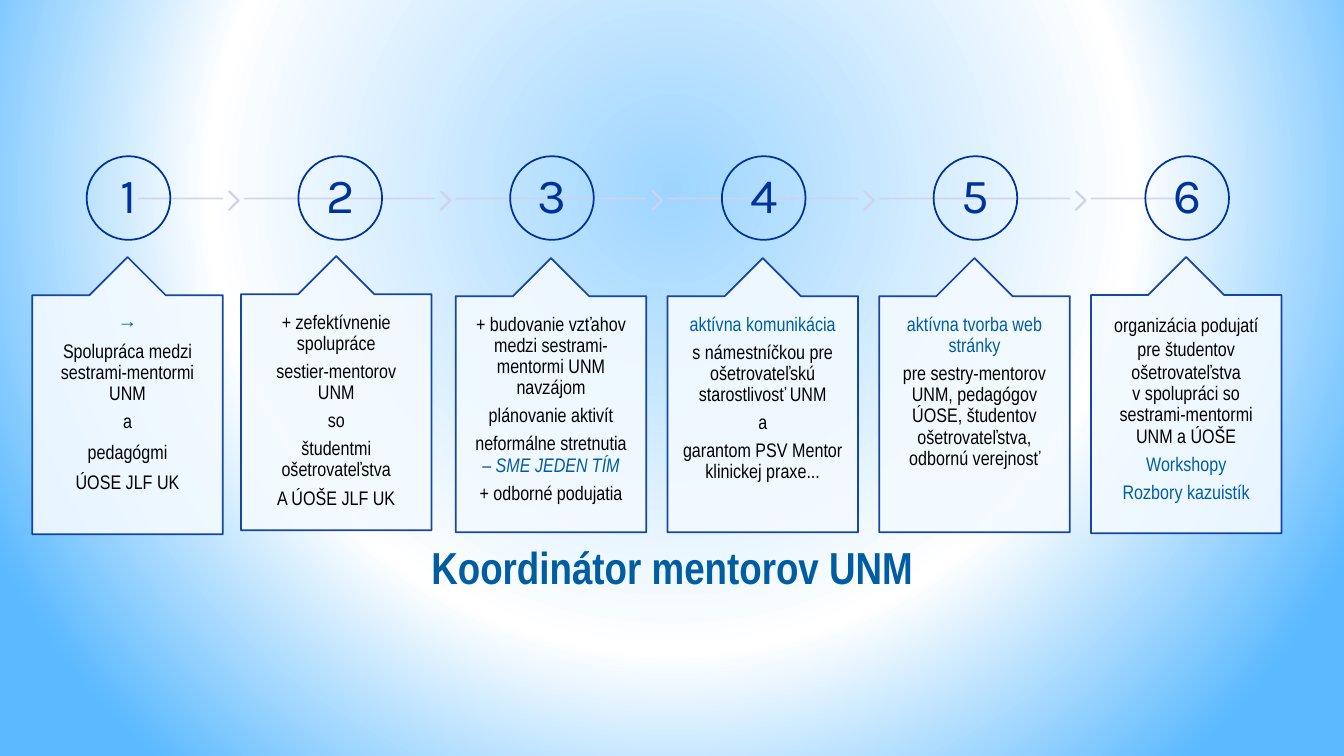
from dataclasses import dataclass
from typing import NamedTuple

from lxml.etree import SubElement
from pptx import Presentation
from pptx.dml.color import RGBColor
from pptx.enum.shapes import MSO_CONNECTOR, MSO_SHAPE
from pptx.enum.text import MSO_ANCHOR, MSO_AUTO_SIZE, PP_ALIGN
from pptx.oxml.ns import qn
from pptx.shapes.autoshape import Shape
from pptx.slide import Slide
from pptx.text.text import Font, TextFrame
from pptx.util import Inches, Pt


@dataclass(frozen=True)
class Theme:
    outline: str = "003399"
    accent: str = "005DA2"
    body: str = "000000"
    rail: str = "D0D3EB"
    panel: str = "F3FAFF"
    backdrop: tuple = ((0, "9ED5FF"), (60, "FFFFFF"), (100, "5BB9FF"))
    text_font: str = "Arial Narrow"
    number_font: str = "Karla"
    title_size: int = 32
    number_size: int = 35
    text_size: int = 14
    line_width: float = 1.25
    opacity: int = 90
    tight: float = 0.9
    space_after: float = 4.9


@dataclass(frozen=True)
class Grid:
    left: float = 0.32
    pitch: float = 2.1
    width: float = 1.89
    rail_row: float = 1.97
    circle: float = 0.83

    def column(self, index: int) -> float:
        return self.left + index * self.pitch


class Line(NamedTuple):
    text: str
    accent: bool = False
    bold: bool = False
    spacing: float = 0.9
    space_after: float = 4.9
    emphasis: str = ""


class Step(NamedTuple):
    top: float
    height: float
    lines: tuple[Line, ...]
    shift: float = 0


THEME = Theme()
GRID = Grid()

STEPS = (
    Step(2.55, 2.75, (
        Line("→", accent=True, bold=True),
        Line("Spolupráca medzi sestrami-mentormi UNM"),
        Line("a"),
        Line("pedagógmi", spacing=1.0),
        Line("ÚOSE JLF UK", spacing=1.0),
    )),
    Step(2.54, 2.72, (
        Line("+ zefektívnenie spolupráce"),
        Line("sestier-mentorov UNM"),
        Line("so"),
        Line("študentmi ošetrovateľstva"),
        Line("A ÚOŠE JLF UK"),
    ), shift=-0.03),
    Step(2.56, 2.72, (
        Line("+ budovanie vzťahov medzi sestrami-mentormi UNM navzájom"),
        Line("plánovanie aktivít"),
        Line("neformálne stretnutia ", emphasis="– SME JEDEN TÍM"),
        Line("+ odborné podujatia"),
    )),
    Step(2.56, 2.72, (
        Line("aktívna komunikácia", accent=True),
        Line("s námestníčkou pre ošetrovateľskú starostlivosť UNM"),
        Line("a"),
        Line("garantom PSV Mentor klinickej praxe..."),
    )),
    Step(2.56, 2.72, (
        Line("aktívna tvorba web stránky", accent=True),
        Line("pre sestry-mentorov UNM, pedagógov ÚOSE, študentov "
             "ošetrovateľstva, odbornú verejnosť"),
    )),
    Step(2.55, 2.74, (
        Line("organizácia podujatí pre študentov ošetrovateľstva",
             spacing=1.0, space_after=0),
        Line("v spolupráci so sestrami-mentormi UNM a ÚOŠE"),
        Line("Workshopy", accent=True),
        Line("Rozbory kazuistík", accent=True),
    )),
)


def style_font(font: Font, name: str, size: int, color: str, bold: bool = False) -> None:
    font.name = name
    font.size = Pt(size)
    font.bold = bold
    font.color.rgb = RGBColor.from_string(color)


def fade(element) -> None:
    for color in element.iter(qn("a:srgbClr")):
        SubElement(color, qn("a:alpha"), val=str(THEME.opacity * 1000))


def set_margins(frame: TextFrame, horizontal: float, vertical: float) -> None:
    frame.word_wrap = True
    frame.margin_left = frame.margin_right = Inches(horizontal)
    frame.margin_top = frame.margin_bottom = Inches(vertical)


def paint_background(slide: Slide) -> None:
    slide.background.fill.gradient()
    gradient = slide.element.find(f".//{qn('a:gradFill')}")
    for child in list(gradient):
        gradient.remove(child)
    stops = SubElement(gradient, qn("a:gsLst"))
    for position, color in THEME.backdrop:
        stop = SubElement(stops, qn("a:gs"), pos=str(position * 1000))
        SubElement(stop, qn("a:srgbClr"), val=color)
    radial = SubElement(gradient, qn("a:path"), path="circle")
    SubElement(radial, qn("a:fillToRect"), l="20000", t="10000", r="20000", b="60000")


def add_outlined(slide: Slide, preset: MSO_SHAPE, left: float, top: float, width: float,
                 height: float, line: str, fill: str = "") -> Shape:
    shape = slide.shapes.add_shape(
        preset, Inches(left), Inches(top), Inches(width), Inches(height))
    shape.shadow.inherit = False
    shape.line.color.rgb = RGBColor.from_string(line)
    shape.line.width = Pt(THEME.line_width)
    if fill:
        shape.fill.solid()
        shape.fill.fore_color.rgb = RGBColor.from_string(fill)
        fade(shape.element.spPr)
    else:
        shape.fill.background()
    return shape


def add_rail(slide: Slide, index: int) -> None:
    left = GRID.column(index)
    first, last = index == 0, index == len(STEPS) - 1
    start = left + 1.05 if first else left
    end = left + 0.94 if last else left + GRID.width
    connector = slide.shapes.add_connector(
        MSO_CONNECTOR.STRAIGHT, Inches(start), Inches(GRID.rail_row),
        Inches(end), Inches(GRID.rail_row))
    connector.line.color.rgb = RGBColor.from_string(THEME.rail)
    connector.line.width = Pt(THEME.line_width)
    properties = connector.element.spPr
    fade(properties)
    SubElement(properties, qn("a:effectLst"))
    if not last:
        chevron = add_outlined(slide, MSO_SHAPE.CHEVRON, left + 1.95, GRID.rail_row - 0.07,
                               0.1, 0.18, THEME.rail, THEME.rail)
        chevron.adjustments[0] = 0.9


def add_number(slide: Slide, index: int) -> None:
    circle = add_outlined(slide, MSO_SHAPE.OVAL, GRID.column(index) + 0.54,
                          GRID.rail_row - 0.42, GRID.circle, GRID.circle, THEME.outline)
    frame = circle.text_frame
    set_margins(frame, 0.03, 0.03)
    frame.vertical_anchor = MSO_ANCHOR.MIDDLE
    paragraph = frame.paragraphs[0]
    paragraph.text = str(index + 1)
    paragraph.alignment = PP_ALIGN.CENTER
    paragraph.line_spacing = THEME.tight
    style_font(paragraph.font, THEME.number_font, THEME.number_size, THEME.outline)


def add_callout(slide: Slide, index: int, step: Step) -> None:
    callout = add_outlined(slide, MSO_SHAPE.UP_ARROW_CALLOUT, GRID.column(index) + step.shift,
                           step.top, GRID.width, step.height, THEME.outline, THEME.panel)
    for position, value in enumerate((0.5, 0.2, 0.2, 1)):
        callout.adjustments[position] = value
    frame = callout.text_frame
    set_margins(frame, 0.15, 0.18)
    frame.vertical_anchor = MSO_ANCHOR.TOP
    for number, line in enumerate(step.lines):
        paragraph = frame.add_paragraph() if number else frame.paragraphs[0]
        paragraph.alignment = PP_ALIGN.CENTER
        paragraph.line_spacing = line.spacing
        paragraph.space_after = Pt(line.space_after)
        style_font(paragraph.font, THEME.text_font, THEME.text_size,
                   THEME.accent if line.accent else THEME.body, line.bold)
        paragraph.add_run().text = line.text
        if line.emphasis:
            run = paragraph.add_run()
            run.text = line.emphasis
            run.font.italic = True
            run.font.color.rgb = RGBColor.from_string(THEME.accent)


def place_title(slide: Slide, text: str) -> None:
    title = slide.shapes.title
    title.left, title.top = Inches(1.17), Inches(5.3)
    title.width, title.height = Inches(11), Inches(1.67)
    frame = title.text_frame
    frame.auto_size = MSO_AUTO_SIZE.NONE
    frame.vertical_anchor = MSO_ANCHOR.TOP
    paragraph = frame.paragraphs[0]
    paragraph.text = text
    paragraph.alignment = PP_ALIGN.CENTER
    style_font(paragraph.font, THEME.text_font, THEME.title_size, THEME.accent, bold=True)


def main() -> None:
    presentation = Presentation()
    presentation.slide_width, presentation.slide_height = Inches(13.33), Inches(7.5)
    slide = presentation.slides.add_slide(presentation.slide_layouts[5])
    paint_background(slide)
    place_title(slide, "Koordinátor mentorov UNM")
    for index, step in enumerate(STEPS):
        add_rail(slide, index)
        add_number(slide, index)
        add_callout(slide, index, step)
    presentation.save("out.pptx")


if __name__ == "__main__":
    main()
